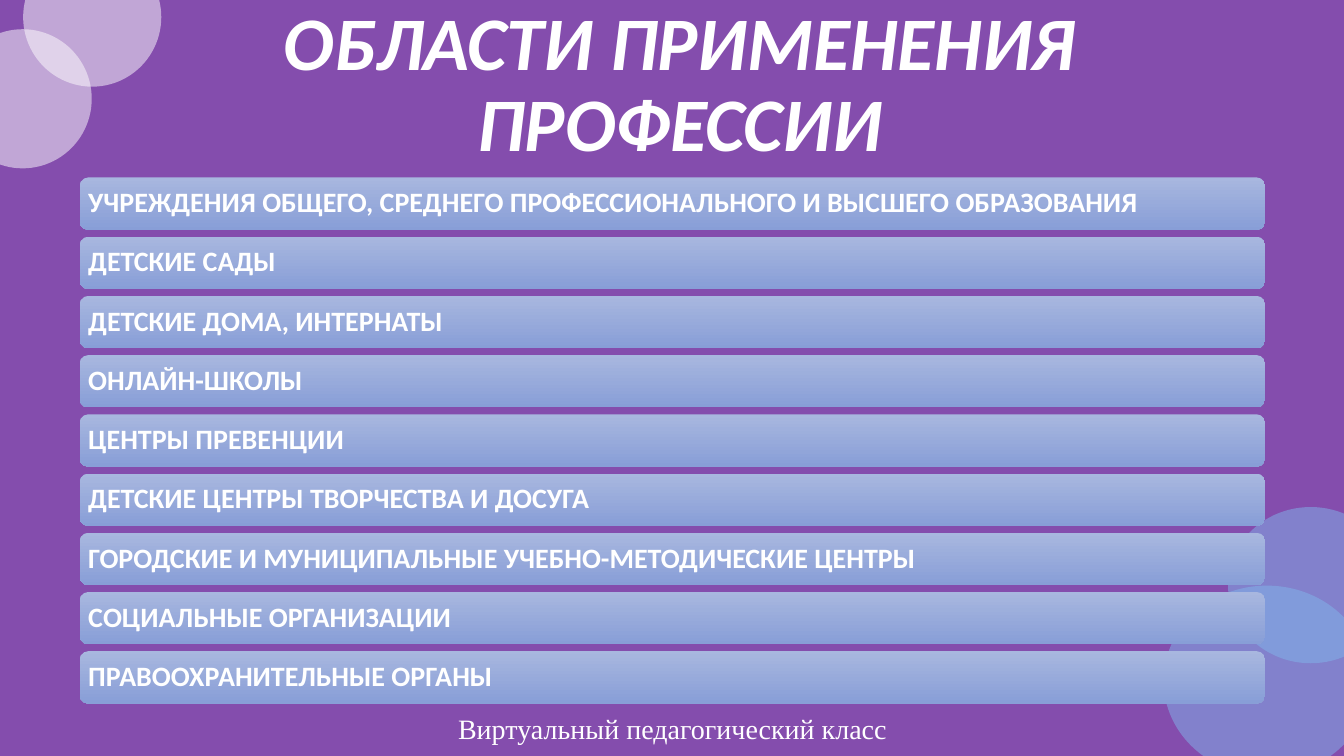
from lxml.etree import SubElement
from pptx import Presentation
from pptx.dml.color import RGBColor
from pptx.enum.shapes import MSO_SHAPE as Shape
from pptx.enum.text import MSO_ANCHOR as Anchor, MSO_AUTO_SIZE as AutoSize, PP_ALIGN as Align
from pptx.oxml.ns import qn
from pptx.util import Inches, Pt

COLORS = {
    "background": "844DAD",
    "text": "FFFFFF",
    "white_circle": "FFFFFF",
    "blue_circle": "81B6EB",
    "bar_top": "A8B7DF",
    "bar_bottom": "889ED7",
}
WIDTH, HEIGHT = 13.33, 7.5
BAR_LEFT, BAR_TOP, BAR_WIDTH, BAR_HEIGHT = 0.79, 1.76, 11.76, 0.52
BAR_PITCH = 0.5875
CIRCLES = [
    ("blue_circle", 11.54, 5.81, 2.05, 1.89),
    ("white_circle", -0.46, 0.29, 1.37, 1.38),
    ("white_circle", 0.23, -0.52, 1.37, 1.38),
    ("blue_circle", 12.18, 5.03, 1.64, 1.55),
]
AREAS = [
    "УЧРЕЖДЕНИЯ ОБЩЕГО, СРЕДНЕГО ПРОФЕССИОНАЛЬНОГО И ВЫСШЕГО ОБРАЗОВАНИЯ",
    "ДЕТСКИЕ САДЫ",
    "ДЕТСКИЕ ДОМА, ИНТЕРНАТЫ",
    "ОНЛАЙН-ШКОЛЫ",
    "ЦЕНТРЫ ПРЕВЕНЦИИ",
    "ДЕТСКИЕ ЦЕНТРЫ ТВОРЧЕСТВА И ДОСУГА",
    "ГОРОДСКИЕ И МУНИЦИПАЛЬНЫЕ УЧЕБНО-МЕТОДИЧЕСКИЕ ЦЕНТРЫ",
    "СОЦИАЛЬНЫЕ ОРГАНИЗАЦИИ",
    "ПРАВООХРАНИТЕЛЬНЫЕ ОРГАНЫ",
]


def color(name):
    return RGBColor.from_string(COLORS[name])


def write(frame, text, size, align, typeface="Calibri", bold=True, italic=False, spacing=0.9):
    frame.word_wrap = True
    frame.auto_size = AutoSize.NONE
    paragraph = frame.paragraphs[0]
    paragraph.text = text
    paragraph.alignment = align
    paragraph.line_spacing = spacing
    font = paragraph.font
    font.name, font.size, font.bold, font.italic = typeface, Pt(size), bold, italic
    font.color.rgb = color("text")


def add_plain_shape(slide, kind, *box):
    shape = slide.shapes.add_shape(kind, *map(Inches, box))
    shape.shadow.inherit = False
    shape.line.fill.background()
    return shape


def add_circle(slide, tone, *box):
    circle = add_plain_shape(slide, Shape.OVAL, *box)
    circle.fill.solid()
    circle.fill.fore_color.rgb = color(tone)
    tint = circle.fill._xPr.find(qn("a:solidFill"))[0]
    SubElement(tint, qn("a:alpha"), val="50000")


def add_bar(slide, row, area):
    top = BAR_TOP + row * BAR_PITCH
    bar = add_plain_shape(slide, Shape.ROUNDED_RECTANGLE, BAR_LEFT, top, BAR_WIDTH, BAR_HEIGHT)
    bar.fill.gradient()
    bar.fill.gradient_angle = 270
    for stop, tone in zip(bar.fill.gradient_stops, ("bar_top", "bar_bottom")):
        stop.color.rgb = color(tone)
    frame = bar.text_frame
    frame.margin_left = frame.margin_right = Inches(0.06)
    frame.vertical_anchor = Anchor.MIDDLE
    write(frame, area, 20, Align.LEFT)


def set_title(slide, text):
    title = slide.shapes.title
    title.left, title.top, title.width, title.height = map(Inches, (0.92, 0.4, 11.64, 1.82))
    frame = title.text_frame
    frame.vertical_anchor = Anchor.BOTTOM
    frame.margin_bottom = Inches(0.55)
    write(frame, text, 54, Align.CENTER, italic=True)


def add_footer(slide, text):
    footer = slide.shapes.add_textbox(*map(Inches, (4.09, 7.07, 5.16, 0.31)))
    footer.text_frame.vertical_anchor = Anchor.MIDDLE
    write(footer.text_frame, text, 20, Align.CENTER, "Times New Roman", bold=False, spacing=1.0)


def main():
    deck = Presentation()
    deck.slide_width, deck.slide_height = Inches(WIDTH), Inches(HEIGHT)
    slide = deck.slides.add_slide(deck.slide_layouts[5])
    slide.background.fill.solid()
    slide.background.fill.fore_color.rgb = color("background")
    for circle in CIRCLES:
        add_circle(slide, *circle)
    add_footer(slide, "Виртуальный педагогический класс")
    set_title(slide, "ОБЛАСТИ ПРИМЕНЕНИЯ ПРОФЕССИИ")
    for row, area in enumerate(AREAS):
        add_bar(slide, row, area)
    deck.save("out.pptx")


if __name__ == "__main__":
    main()
